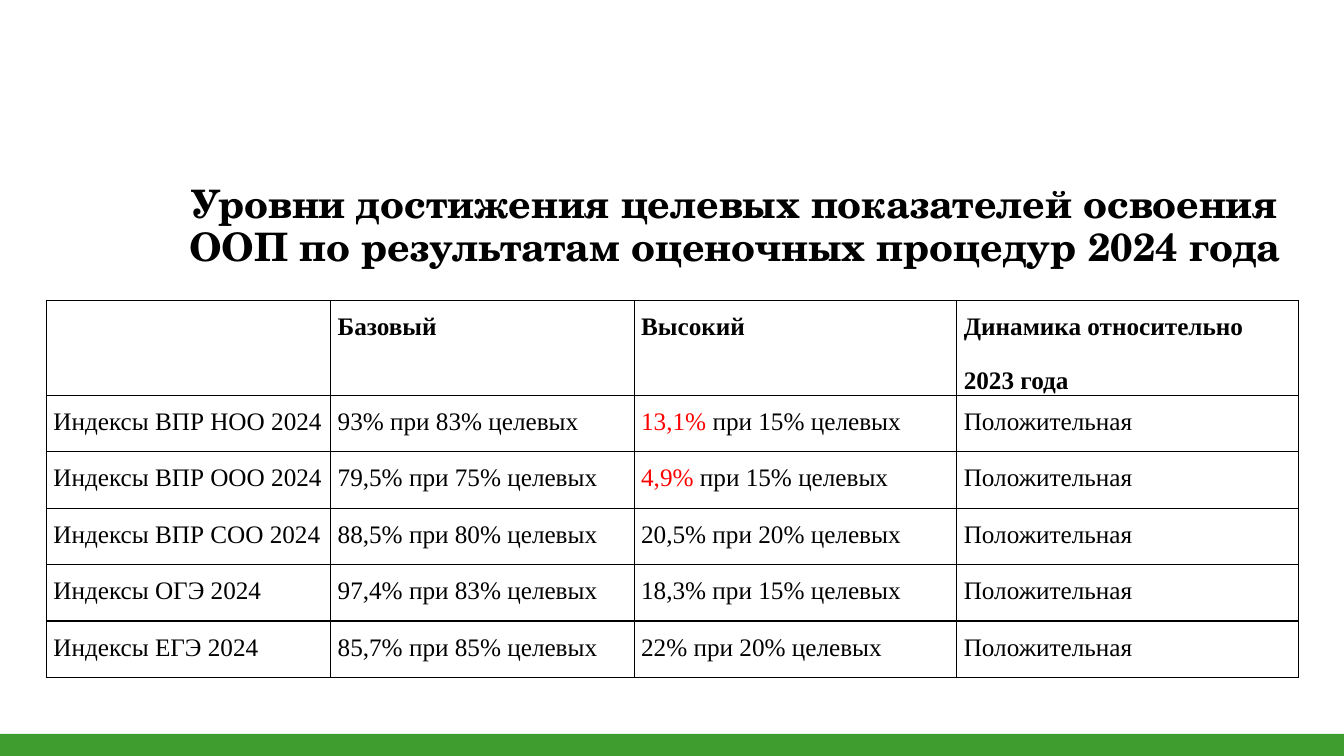
from lxml import etree
from pptx import Presentation, util as u
from pptx.dml.color import RGBColor
from pptx.enum import shapes, text
from pptx.oxml import ns

PX = 9144
COLORS = {"ink": "000000", "alert": "FF0000", "bar": "3F9D2F"}
TITLE = "Уровни достижения целевых показателей освоения ООП по результатам оценочных процедур 2024 года"
COLUMNS = [282, 301, 320, 339]
HEADER_HEIGHT, ROW_HEIGHT = 74, 56
HEADER = ["", "Базовый", "Высокий", "Динамика относительно\n2023 года"]
GROWTH = "Положительная"
RESULTS = [
    ("Индексы ВПР НОО 2024", "93%", "83%", "13,1%", "15%"),
    ("Индексы ВПР ООО 2024", "79,5%", "75%", "4,9%", "15%"),
    ("Индексы ВПР СОО 2024", "88,5%", "80%", "20,5%", "20%"),
    ("Индексы ОГЭ 2024", "97,4%", "83%", "18,3%", "15%"),
    ("Индексы ЕГЭ 2024", "85,7%", "85%", "22%", "20%"),
]
BELOW_TARGET = {"13,1%", "4,9%"}


def apply(target, values):
    for name, value in values.items():
        setattr(target, name, value)


class SlideBuilder:
    title_font = {"name": "TeX Gyre Schola", "size": u.Pt(28), "bold": True}
    title_paragraph = {"alignment": text.PP_ALIGN.CENTER, "line_spacing": 0.9}
    cell_font = {"name": "Times New Roman", "size": u.Pt(18)}
    cell_paragraph = {"alignment": text.PP_ALIGN.JUSTIFY, "line_spacing": 1.45,
                      "space_after": u.Pt(10)}
    cell_margins = {"margin_left": 7 * PX, "margin_right": 7 * PX,
                    "margin_top": 0, "margin_bottom": 0}

    def __init__(self, presentation):
        self.slide = presentation.slides.add_slide(presentation.slide_layouts[5])

    def run(self, paragraph, words, font, color="ink"):
        run = paragraph.add_run()
        run.text = words
        apply(run.font, font)
        run.font.color.rgb = RGBColor.from_string(COLORS[color])

    def title(self, words, left, top, width, height):
        shape = self.slide.shapes.title
        apply(shape, {"left": left * PX, "top": top * PX,
                      "width": width * PX, "height": height * PX})
        apply(shape.text_frame, {"word_wrap": True,
                                 "auto_size": text.MSO_AUTO_SIZE.NONE,
                                 "vertical_anchor": text.MSO_ANCHOR.MIDDLE})
        paragraph = shape.text_frame.paragraphs[0]
        apply(paragraph, self.title_paragraph)
        self.run(paragraph, words, self.title_font)

    def bar(self, color, left, top, width, height):
        shape = self.slide.shapes.add_shape(
            shapes.MSO_SHAPE.RECTANGLE, left * PX, top * PX, width * PX, height * PX)
        shape.shadow.inherit = False
        shape.fill.solid()
        shape.fill.fore_color.rgb = RGBColor.from_string(COLORS[color])
        shape.line.fill.background()

    def borders(self, cell):
        properties = cell._tc.get_or_add_tcPr()
        for side in ("lnL", "lnR", "lnT", "lnB"):
            line = etree.SubElement(properties, ns.qn(f"a:{side}"), w=str(u.Pt(1)))
            fill = etree.SubElement(line, ns.qn("a:solidFill"))
            etree.SubElement(fill, ns.qn("a:srgbClr"), val=COLORS["ink"])

    def cell(self, cell, paragraphs, bold):
        apply(cell, self.cell_margins)
        self.borders(cell)
        cell.fill.background()
        for index, runs in enumerate(paragraphs):
            frame = cell.text_frame
            paragraph = frame.add_paragraph() if index else frame.paragraphs[0]
            apply(paragraph, self.cell_paragraph)
            for words, color in runs:
                self.run(paragraph, words, self.cell_font | {"bold": bold}, color)

    def table(self, rows, left, top, widths, heights):
        table = self.slide.shapes.add_table(
            len(rows), len(widths), left * PX, top * PX,
            sum(widths) * PX, sum(heights) * PX).table
        apply(table, {"first_row": False, "horz_banding": False})
        for column, width in zip(table.columns, widths):
            column.width = width * PX
        for index, (row, height) in enumerate(zip(rows, heights)):
            table.rows[index].height = height * PX
            for cell, paragraphs in zip(table.rows[index].cells, row):
                self.cell(cell, paragraphs, bold=index == 0)


def plain(words):
    return [[(line, "ink")] for line in words.splitlines()]


def high_level(value, target):
    goal = f"при {target} целевых"
    if value in BELOW_TARGET:
        return [[(f"{value} ", "alert"), (goal, "ink")]]
    return plain(f"{value} {goal}")


def main():
    presentation = Presentation()
    apply(presentation, {"slide_width": 1333 * PX, "slide_height": 750 * PX})
    builder = SlideBuilder(presentation)
    builder.bar("bar", 0, 728, 1333, 22)
    builder.title(TITLE, 154, 153, 1150, 145)
    rows = [[plain(words) for words in HEADER]]
    for name, basic, basic_target, high, high_target in RESULTS:
        rows.append([plain(name), plain(f"{basic} при {basic_target} целевых"),
                     high_level(high, high_target), plain(GROWTH)])
    heights = [HEADER_HEIGHT] + [ROW_HEIGHT] * len(RESULTS)
    builder.table(rows, 46, 298, COLUMNS, heights)
    presentation.save("out.pptx")


if __name__ == "__main__":
    main()
